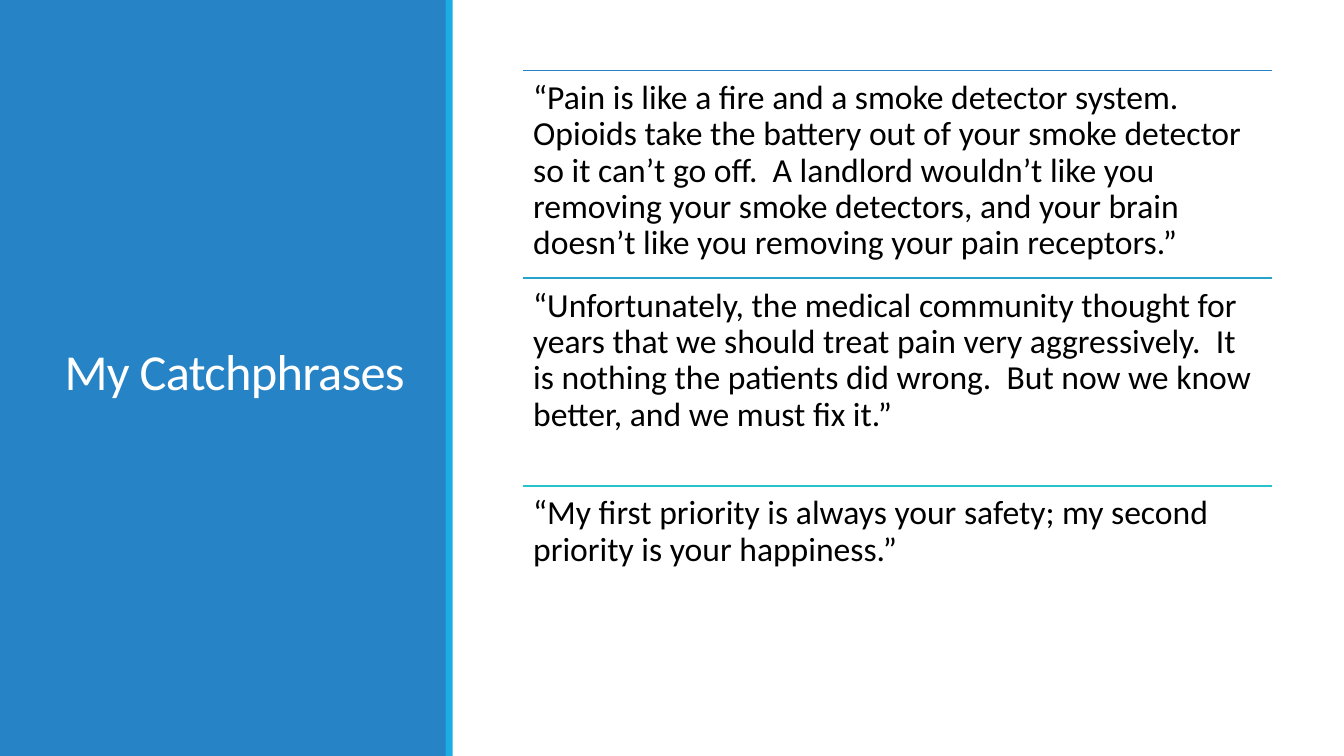
from pptx import Presentation
from pptx.dml.color import RGBColor
from pptx.enum.shapes import MSO_CONNECTOR, MSO_SHAPE
from pptx.enum.text import MSO_ANCHOR, MSO_AUTO_SIZE, PP_ALIGN
from pptx.oxml.ns import qn
from pptx.util import Inches, Pt
from lxml.etree import SubElement

BLUE = RGBColor(0x26, 0x83, 0xC6)
CYAN = RGBColor(0x1C, 0xAD, 0xE4)
TEAL = RGBColor(0x27, 0xA3, 0xC9)
AQUA = RGBColor(0x28, 0xC4, 0xCC)
WHITE = RGBColor(0xFF, 0xFF, 0xFF)
BLACK = RGBColor(0x00, 0x00, 0x00)

TITLE = "My Catchphrases"
QUOTES = [
    ("“Pain is like a fire and a smoke detector system.  Opioids take the battery out of "
     "your smoke detector so it can’t go off.  A landlord wouldn’t like you removing your "
     "smoke detectors, and your brain doesn’t like you removing your pain receptors.”", BLUE),
    ("“Unfortunately, the medical community thought for years that we should treat pain very "
     "aggressively.  It is nothing the patients did wrong.  But now we know better, and we "
     "must fix it.”", TEAL),
    ("“My first priority is always your safety; my second priority is your happiness.”", AQUA),
]

SLIDE_W, SLIDE_H = 13.33, 7.5
PANEL_W, STRIPE_X, STRIPE_W = 4.43, 4.42, 0.07
LIST_X, LIST_Y, LIST_W, ROW_H = 5.19, 0.7, 7.43, 2.06


def add_bar(s, x, w, color):
    """Add a plain rectangle as tall as the slide."""
    bar = s.shapes.add_shape(MSO_SHAPE.RECTANGLE, Inches(x), 0, Inches(w), Inches(SLIDE_H))
    bar.shadow.inherit = False
    bar.fill.solid()
    bar.fill.fore_color.rgb = color
    bar.line.fill.background()
    return bar


def add_rule(s, y, color):
    """Add the line above a quote."""
    rule = s.shapes.add_connector(MSO_CONNECTOR.STRAIGHT, Inches(LIST_X), Inches(y),
                                  Inches(LIST_X + LIST_W), Inches(y))
    rule.line.color.rgb = color
    rule.line.width = Pt(1.25)
    SubElement(rule.element.spPr, qn("a:effectLst"))


def set_text(shape, text, size, color, line_spacing, anchor, inset, tracking=None):
    tf = shape.text_frame
    tf.word_wrap = True
    tf.auto_size = MSO_AUTO_SIZE.NONE
    tf.vertical_anchor = anchor
    tf.margin_left = tf.margin_right = Inches(0.1)
    tf.margin_top = tf.margin_bottom = Inches(inset)
    p = tf.paragraphs[0]
    p.alignment = PP_ALIGN.LEFT
    p.line_spacing = line_spacing
    r = p.add_run()
    r.text = text
    r.font.name = "Calibri"
    r.font.size = Pt(size)
    r.font.color.rgb = color
    if tracking is not None:
        p.runs[0].font._element.set("spc", str(int(tracking * 100)))


def main():
    prs = Presentation()
    prs.slide_width, prs.slide_height = Inches(SLIDE_W), Inches(SLIDE_H)
    s = prs.slides.add_slide(prs.slide_layouts[5])

    title = s.shapes.title
    title.left, title.top = Inches(0.54), Inches(0.57)
    title.width, title.height = Inches(3.88), Inches(6.31)
    set_text(title, TITLE, 36, WHITE, 0.85, MSO_ANCHOR.MIDDLE, 0.05, tracking=-0.5)

    panel = add_bar(s, 0, PANEL_W, BLUE)
    panel.element.addnext(title.element)  # the title stands in front of the panel
    add_bar(s, STRIPE_X, STRIPE_W, CYAN)

    for row, (quote, color) in enumerate(QUOTES):
        y = LIST_Y + row * ROW_H
        add_rule(s, y, color)
        box = s.shapes.add_textbox(Inches(LIST_X), Inches(y), Inches(LIST_W), Inches(ROW_H))
        set_text(box, quote, 24, BLACK, 0.9, MSO_ANCHOR.TOP, 0.1)

    prs.save("out.pptx")


if __name__ == "__main__":
    main()
